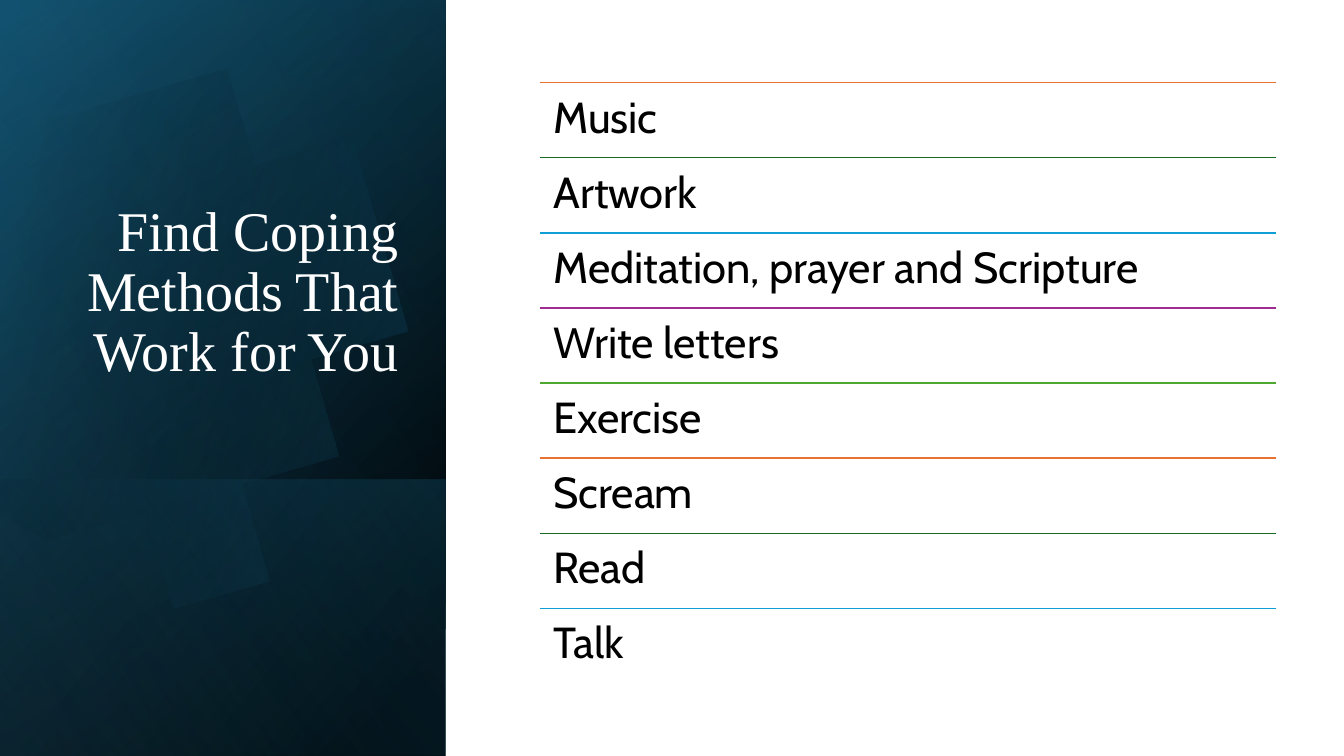
import math
from dataclasses import dataclass

import lxml.etree
import pptx
import pptx.dml.color
import pptx.enum.shapes
import pptx.enum.text
import pptx.oxml.ns
import pptx.util

Inches = pptx.util.Inches
RGB = pptx.dml.color.RGBColor.from_string
qn = pptx.oxml.ns.qn


@dataclass
class Theme:
    black: str = "000000"
    white: str = "FFFFFF"
    teal: str = "156082"
    deep_teal: str = "104862"
    sky: str = "46B1E1"
    rules: tuple = ("E97132", "196B24", "0F9ED5", "A02B93", "4EA72E")
    title_font: str = "Times New Roman"
    title_size: int = 40
    item_font: str = "Cabin"
    item_size: int = 31


theme = Theme()


def add_text(s, text, box, font, size, color, align, anchor, insets):
    tb = s.shapes.add_textbox(*map(Inches, box))
    tf = tb.text_frame
    tf.word_wrap = True
    tf.vertical_anchor = anchor
    tf.margin_left, tf.margin_top, tf.margin_right, tf.margin_bottom = map(Inches, insets)
    p = tf.paragraphs[0]
    p.alignment = align
    p.line_spacing = 0.9
    r = p.add_run()
    r.text = text
    r.font.name = font
    r.font.size = pptx.util.Pt(size)
    r.font.color.rgb = RGB(color)


def fill_gradient(sp, stops, angle):
    sp.shadow.inherit = False
    sp.line.fill.background()
    sp.fill.gradient()
    sp.fill.gradient_angle = 360 - angle
    for gs, (position, color, alpha) in zip(sp.fill.gradient_stops, stops):
        gs.position = position / 100
        gs.color.rgb = RGB(color)
    for clr, (position, color, alpha) in zip(sp._element.spPr.iter(qn("a:srgbClr")), stops):
        if alpha < 100:
            lxml.etree.SubElement(clr, qn("a:alpha")).set("val", str(alpha * 1000))


prs = pptx.Presentation()
prs.slide_width, prs.slide_height = Inches(13.33), Inches(7.5)
s = prs.slides.add_slide(prs.slide_layouts[6])

full = (-1.54, 1.54, 7.5, 4.42)
panels = [
    (full, [(8, theme.black, 100), (100, theme.deep_teal, 100)], 50),
    (full, [(0, theme.black, 0), (99, theme.teal, 46)], 30),
    ((0.84, 3.92, 2.74, 4.42), [(2, theme.teal, 29), (100, theme.black, 30)], 130),
    (full, [(0, theme.black, 0), (99, theme.sky, 11)], 120),
]

disc_start = (1.49, 1.1)
disc_curves = [
    [(2.46, 1.12), (3.35, 1.77), (3.63, 2.75)],
    [(3.98, 3.97), (3.28, 5.23), (2.07, 5.58)],
    [(1.31, 5.8), (0.53, 5.61), (-0.03, 5.14)],
    [(-0.15, 5.03)],
    [(-0.15, 1.75)],
    [(0, 1.61)],
    [(0.23, 1.42), (0.5, 1.28), (0.8, 1.19)],
    [(1.03, 1.13), (1.26, 1.1), (1.49, 1.1)],
]
disc_center = (1.58, 3.34)
disc_rotation = 343.9
steps = 20

outline = [disc_start]
for curve in disc_curves:
    if len(curve) == 1:
        outline += curve
        continue
    controls = [outline[-1]] + curve
    for i in range(1, steps + 1):
        t = i / steps
        weights = [math.comb(3, k) * t**k * (1 - t) ** (3 - k) for k in range(4)]
        outline.append(tuple(sum(w * c[axis] for w, c in zip(weights, controls)) for axis in (0, 1)))

turn = math.radians(360 - disc_rotation)
cx, cy = disc_center
points = [
    (
        cx + (x - cx) * math.cos(turn) - (y - cy) * math.sin(turn),
        cy + (x - cx) * math.sin(turn) + (y - cy) * math.cos(turn),
    )
    for x, y in outline
]

for i, (box, stops, angle) in enumerate(panels):
    if i == 3:
        fb = s.shapes.build_freeform(*points[0], scale=Inches(1))
        fb.add_line_segments(points[1:], close=True)
        disc = fb.convert_to_shape()
        disc.rotation = disc_rotation
        fill_gradient(disc, [(29, theme.black, 0), (100, theme.teal, 43)], 30)
    sp = s.shapes.add_shape(pptx.enum.shapes.MSO_SHAPE.RECTANGLE, *map(Inches, box))
    sp.rotation = 90
    sp._element.spPr.xfrm.set("flipH", "1")
    fill_gradient(sp, stops, angle)

align = pptx.enum.text.PP_ALIGN
anchor = pptx.enum.text.MSO_ANCHOR
add_text(s, "Find Coping Methods That Work for You", (0.64, 1.84, 3.41, 2.62),
         font=theme.title_font, size=theme.title_size, color=theme.white,
         align=align.RIGHT, anchor=anchor.BOTTOM, insets=(0.1, 0.05, 0.1, 0.65))

items = ["Music", "Artwork", "Meditation, prayer and Scripture", "Write letters",
         "Exercise", "Scream", "Read", "Talk"]
left, top, width, row = 5.36, 0.82, 7.3, 0.745
for i, item in enumerate(items):
    y = top + i * row
    line = s.shapes.add_connector(pptx.enum.shapes.MSO_CONNECTOR.STRAIGHT,
                                  Inches(left), Inches(y), Inches(left + width), Inches(y))
    line.line.color.rgb = RGB(theme.rules[i % len(theme.rules)])
    line.line.width = pptx.util.Pt(1)
    lxml.etree.SubElement(line._element.spPr, qn("a:effectLst"))
    add_text(s, item, (left, y, width, row),
             font=theme.item_font, size=theme.item_size, color=theme.black,
             align=align.LEFT, anchor=anchor.TOP, insets=(0.13,) * 4)

prs.save("out.pptx")
